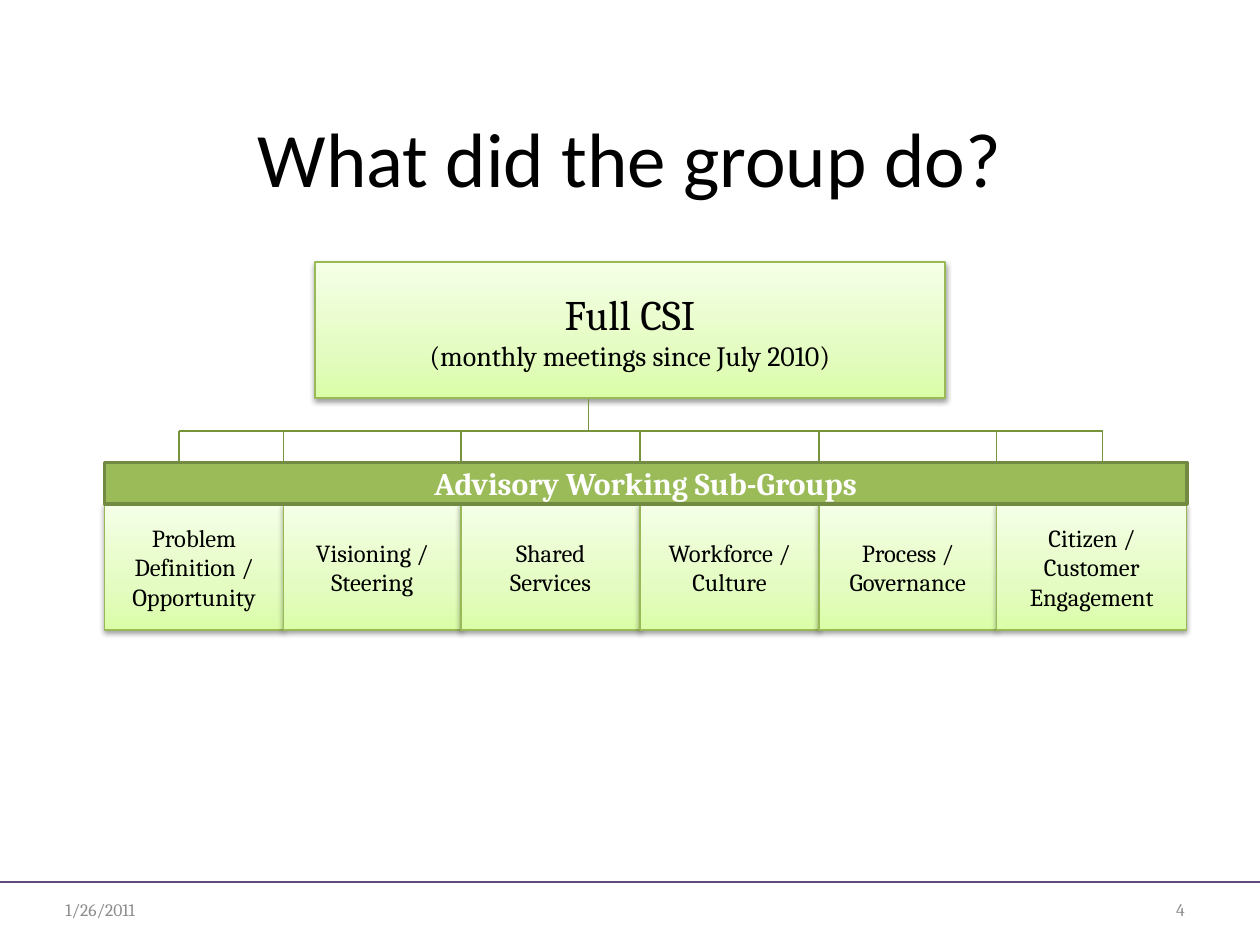
from copy import deepcopy

from lxml.etree import SubElement
from pptx import Presentation
from pptx.dml.color import RGBColor
from pptx.enum.shapes import MSO_CONNECTOR, MSO_SHAPE
from pptx.enum.text import MSO_ANCHOR, PP_ALIGN
from pptx.oxml.ns import qn
from pptx.util import Inches, Pt

COLORS = {
    "black": "000000",
    "white": "FFFFFF",
    "footer": "8C8C8C",
    "rule": "604A7B",
    "branch": "77933C",
    "banner": "9BBB59",
    "banner_edge": "738A42",
    "card_edge": "98B955",
}
CARD_STOPS = [(0, "DAFDA7"), (0.35, "E4FCC2"), (1, "F5FFE7")]

prs = Presentation()
prs.slide_width, prs.slide_height = Inches(10), Inches(7.5)
slide = prs.slides.add_slide(prs.slide_layouts[6])


def write(shape, lines, color, align=PP_ALIGN.CENTER, anchor=MSO_ANCHOR.MIDDLE, font="Cambria", bold=False):
    frame = shape.text_frame
    frame.word_wrap = True
    frame.vertical_anchor = anchor
    frame.text = "\n".join(text for text, size in lines)
    for paragraph, (text, size) in zip(frame.paragraphs, lines):
        paragraph.alignment = align
        paragraph.font.name = font
        paragraph.font.size = Pt(size)
        paragraph.font.bold = bold
        paragraph.font.color.rgb = RGBColor.from_string(COLORS[color])


def draw_line(x1, y1, x2, y2, color, width=0.75):
    line = slide.shapes.add_connector(
        MSO_CONNECTOR.STRAIGHT, Inches(x1), Inches(y1), Inches(x2), Inches(y2))
    line.line.color.rgb = RGBColor.from_string(COLORS[color])
    line.line.width = Pt(width)
    SubElement(line._element.spPr, qn("a:effectLst"))


draw_line(0, 7, 10, 7, "rule")

for text, left, width, align in [
    ("1/26/2011", 0.42, 1.83, PP_ALIGN.LEFT),
    ("4", 8.92, 0.58, PP_ALIGN.RIGHT),
]:
    footer = slide.shapes.add_textbox(Inches(left), Inches(7.02), Inches(width), Inches(0.4))
    write(footer, [(text, 10)], "footer", align)

title = slide.shapes.add_textbox(Inches(0.5), Inches(0.83), Inches(9), Inches(1.25))
write(title, [("What did the group do?", 44)], "black", anchor=MSO_ANCHOR.TOP, font="Calibri")

groups = [
    "Problem Definition / Opportunity",
    "Visioning / Steering",
    "Shared Services",
    "Workforce / Culture",
    "Process / Governance",
    "Citizen / Customer Engagement",
]
group_left, group_right = 0.83, 9.42
edges = [round(group_left + i * 8.5 / 6, 2) for i in range(len(groups))] + [group_right]

cards = [(2.5, 2.08, 5, 1.08, [("Full CSI", 24), ("(monthly meetings since July 2010)", 16)])]
for group, left, right in zip(groups, edges, edges[1:]):
    cards.append((left, 4, right - left, 1, [(group, 14)]))

for left, top, width, height, lines in cards:
    card = slide.shapes.add_shape(
        MSO_SHAPE.RECTANGLE, Inches(left), Inches(top), Inches(width), Inches(height))
    card.fill.gradient()
    card.fill.gradient_angle = 90
    stop_list = card._element.spPr.find(".//" + qn("a:gsLst"))
    stop_list.insert(1, deepcopy(stop_list[0]))
    for stop, (position, color) in zip(card.fill.gradient_stops, CARD_STOPS):
        stop.position = position
        stop.color.rgb = RGBColor.from_string(color)
    card.line.color.rgb = RGBColor.from_string(COLORS["card_edge"])
    card.line.width = Pt(0.75)
    card.shadow.inherit = False
    effects = card._element.spPr.find(qn("a:effectLst"))
    shadow = SubElement(effects, qn("a:outerShdw"), blurRad="40000", dist="20000",
                        dir="5400000", rotWithShape="0")
    shade = SubElement(shadow, qn("a:srgbClr"), val=COLORS["black"])
    SubElement(shade, qn("a:alpha"), val="38000")
    write(card, lines, "black")

banner = slide.shapes.add_shape(
    MSO_SHAPE.RECTANGLE, Inches(group_left), Inches(3.67),
    Inches(group_right - group_left), Inches(0.33))
banner.shadow.inherit = False
banner.fill.solid()
banner.fill.fore_color.rgb = RGBColor.from_string(COLORS["banner"])
banner.line.color.rgb = RGBColor.from_string(COLORS["banner_edge"])
banner.line.width = Pt(2)
write(banner, [("Advisory Working Sub-Groups", 18)], "white", bold=True)

branch_left, branch_right, branch_y = 1.42, 8.75, 3.42
draw_line(branch_left, branch_y, branch_right, branch_y, "branch", 1)
draw_line(4.67, branch_y, 4.67, 3.17, "branch")
for x in [branch_left, *edges[1:-1], branch_right]:
    draw_line(x, branch_y, x, 3.67, "branch")

prs.save("out.pptx")
